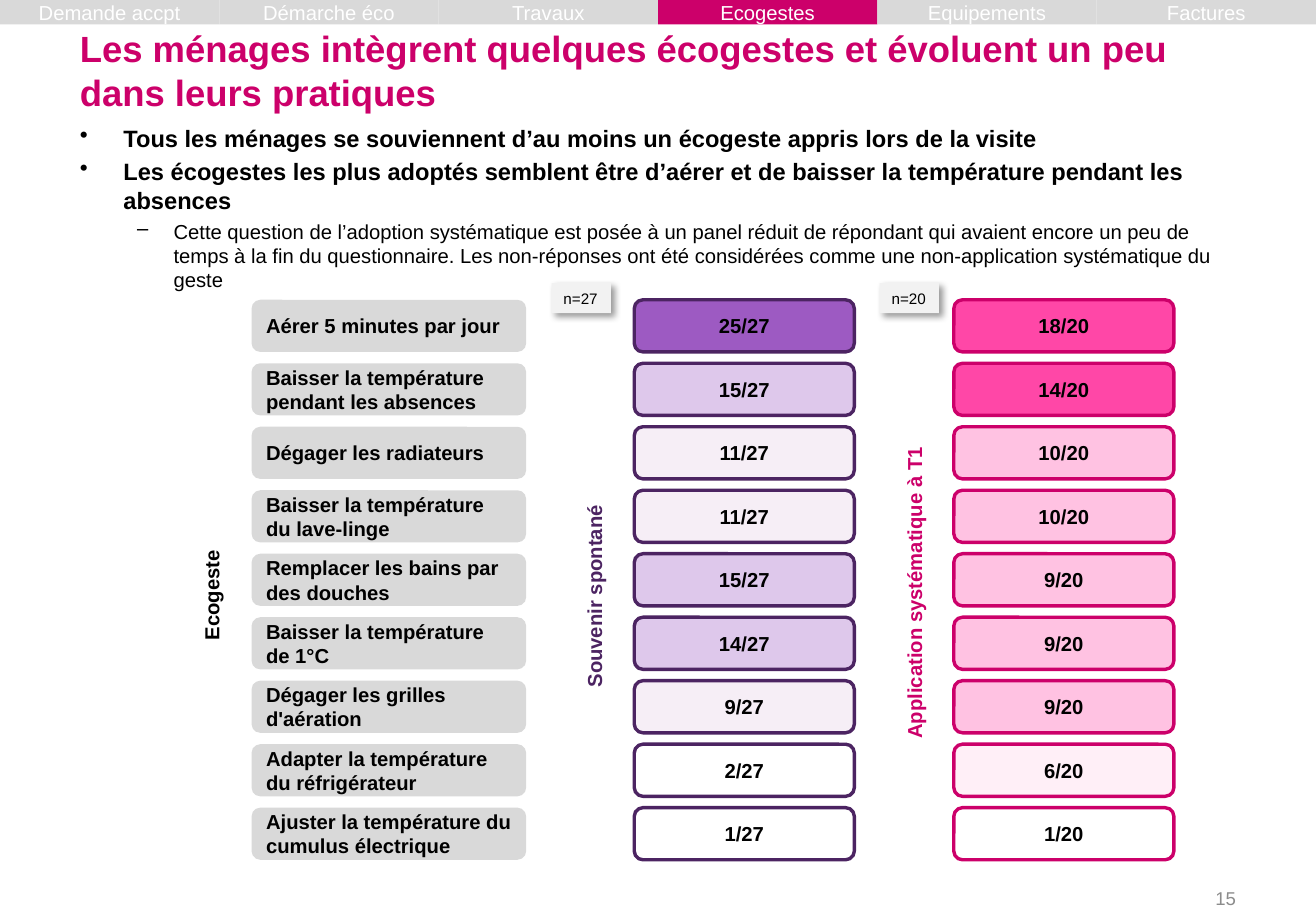
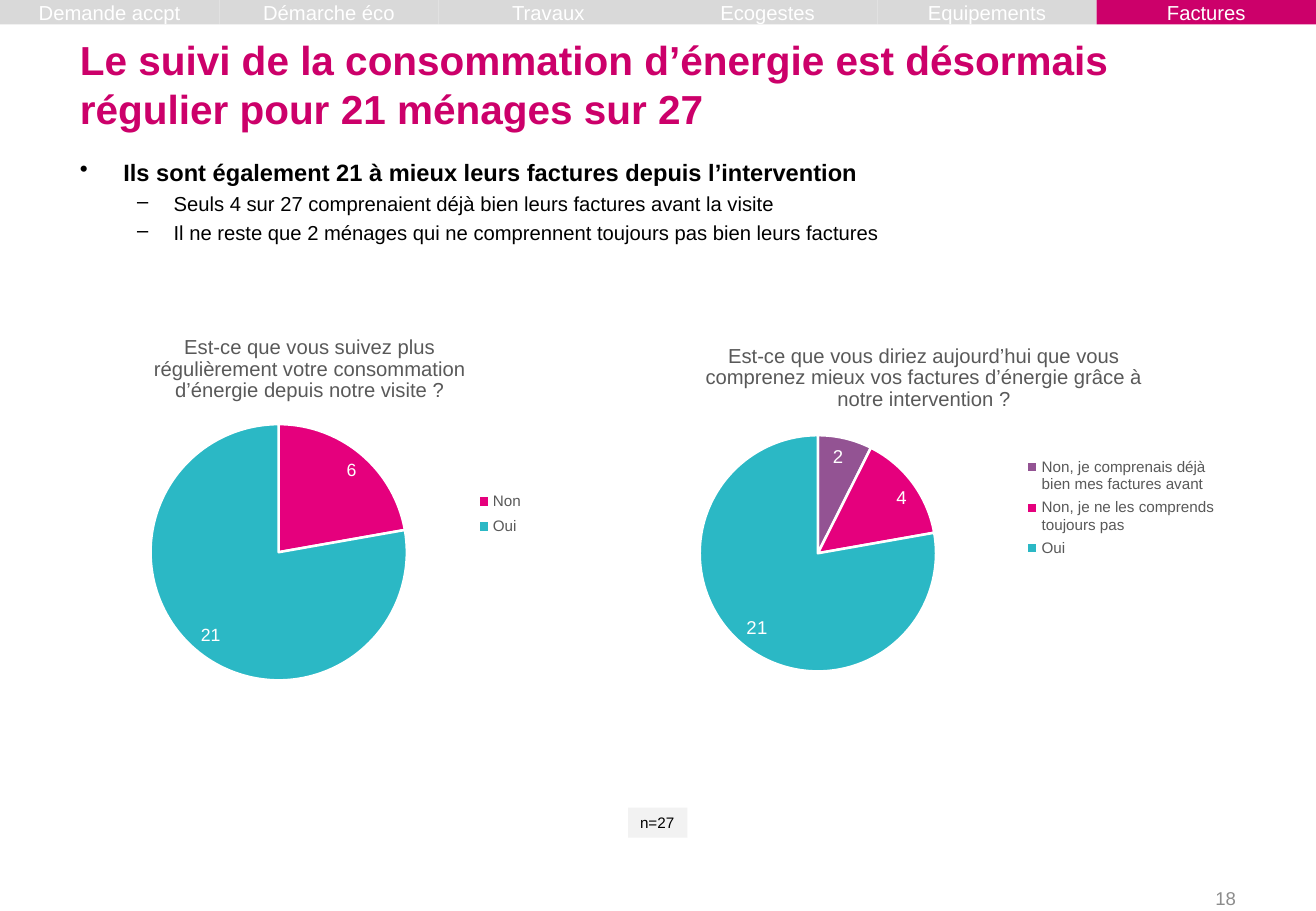
from dataclasses import dataclass

from lxml import etree
from pptx import Presentation
from pptx import util as u
from pptx.chart import data as cd
from pptx.dml.color import RGBColor
from pptx.enum import chart as ch, shapes, text
from pptx.oxml import ns

Cm, Pt = u.Cm, u.Pt


@dataclass(frozen=True)
class Theme:
    font: str = "Arial"
    accent: str = "CC006A"
    band: str = "D9D9D9"
    note: str = "F2F2F2"
    white: str = "FFFFFF"
    black: str = "000000"
    grey: str = "595959"
    page: str = "8C8C8C"
    violet: str = "4C2462"
    # Fills from the strongest share to the weakest
    violets: tuple = ("9D5AC2", "DEC8EB", "F6EEF6", "FFFFFF")
    pinks: tuple = ("FF47A7", "FFC2E2", "FFEFF7", "FFFFFF")
    teal: str = "2BB8C5"
    magenta: str = "E5007D"
    plum: str = "935393"
    title: float = 24
    title_small: float = 21.6
    body: float = 14
    label: float = 12
    page_size: float = 11
    small: float = 9


T = Theme()
WIDTH, HEIGHT = 27.51, 19.05
PAD = {"margin_left": Cm(0.3), "margin_right": Cm(0.3),
       "margin_top": Cm(0.15), "margin_bottom": Cm(0.15)}
MIDDLE = {"vertical_anchor": text.MSO_ANCHOR.MIDDLE}
CENTER, RIGHT = text.PP_ALIGN.CENTER, text.PP_ALIGN.RIGHT
TABS = ["Demande accpt", "Démarche éco", "Travaux", "Ecogestes",
        "Equipements", "Factures"]
SHARE_STEPS = (0.7, 0.42, 0.3)
GESTURES = [
    ("Aérer 5 minutes par jour", 25, 18),
    ("Baisser la température pendant les absences", 15, 14),
    ("Dégager les radiateurs", 11, 10),
    ("Baisser la température du lave-linge", 11, 10),
    ("Remplacer les bains par des douches", 15, 9),
    ("Baisser la température de 1°C", 14, 9),
    ("Dégager les grilles d'aération", 9, 9),
    ("Adapter la température du réfrigérateur", 2, 6),
    ("Ajuster la température du cumulus électrique", 1, 1),
]


# --- Helpers ---
def set_all(obj, fmt):
    for name, value in fmt.items():
        setattr(obj, name, value)


def style(font, size, color, bold=False):
    set_all(font, {"name": T.font, "size": Pt(size), "bold": bold})
    font.color.rgb = RGBColor.from_string(color)


def write(p, words, size, color, bold=False, align=None):
    r = p.add_run()
    r.text = words
    style(r.font, size, color, bold)
    if align is not None:
        p.alignment = align


def add_text(s, box, words, size, color, bold=False, align=None, frame=None):
    sp = s.shapes.add_textbox(*map(Cm, box))
    set_all(sp.text_frame, {"word_wrap": True, **(frame or {})})
    write(sp.text_frame.paragraphs[0], words, size, color, bold, align)
    return sp


def add_block(parent, kind, box, fill, line=None):
    sp = parent.add_shape(kind, *map(Cm, box))
    sp.shadow.inherit = False
    sp.fill.solid()
    sp.fill.fore_color.rgb = RGBColor.from_string(fill)
    if line:
        sp.line.color.rgb = RGBColor.from_string(line)
        sp.line.width = Pt(2)
    else:
        sp.line.fill.background()
    return sp


# --- Shared slide parts ---
def add_tabs(s, box, active):
    left, top, width, height = box
    step = width / len(TABS)
    for i, name in enumerate(TABS):
        fill = T.accent if name == active else T.band
        sp = add_block(s.shapes, shapes.MSO_SHAPE.RECTANGLE,
                       (left + i * step, top, step, height), fill)
        set_all(sp.text_frame, {**MIDDLE, "margin_left": 0, "margin_right": 0})
        write(sp.text_frame.paragraphs[0], name, T.label, T.white, align=CENTER)


def add_body(s, box, items):
    tf = s.shapes.add_textbox(*map(Cm, box)).text_frame
    set_all(tf, {**PAD, "word_wrap": True})
    levels = [("•", 0.91, -0.91, T.body, True), ("–", 1.96, -0.76, T.label, False)]
    for i, (level, words) in enumerate(items):
        mark, margin, indent, size, bold = levels[level]
        p = tf.add_paragraph() if i else tf.paragraphs[0]
        pPr = p._p.get_or_add_pPr()
        pPr.set("marL", str(Cm(margin)))
        pPr.set("indent", str(Cm(indent)))
        etree.SubElement(pPr, ns.qn("a:buChar")).set("char", mark)
        set_all(p, {"level": level, "space_before": Pt(3 if i else 0)})
        write(p, words, size, T.black, bold)


def add_base(prs, active, title, title_box, title_size, page):
    s = prs.slides.add_slide(prs.slide_layouts[6])
    add_tabs(s, (0, 0, WIDTH, 0.51), active)
    add_text(s, title_box, title, title_size, T.accent, True,
             frame={**PAD, "vertical_anchor": text.MSO_ANCHOR.BOTTOM})
    add_text(s, (19.71, 18.53, 6.43, 0.5), page, T.page_size, T.page,
             align=RIGHT, frame={**PAD, **MIDDLE, "margin_top": 0, "margin_bottom": 0})
    return s


def add_sample_note(s, left, top, words, shadow=False):
    sp = add_block(s.shapes, shapes.MSO_SHAPE.RECTANGLE,
                   (left, top, 1.24, 0.63), T.note)
    set_all(sp.text_frame, {**MIDDLE, "word_wrap": False})
    write(sp.text_frame.paragraphs[0], words, T.small, T.black,
          align=text.PP_ALIGN.LEFT)
    if shadow:
        effects = sp._element.spPr.find(ns.qn("a:effectLst"))
        outer = etree.SubElement(effects, ns.qn("a:outerShdw"), {
            "blurRad": str(Pt(4)), "dist": str(Pt(3)), "dir": "2700000",
            "algn": "tl", "rotWithShape": "0"})
        color = etree.SubElement(outer, ns.qn("a:srgbClr"), val=T.black)
        etree.SubElement(color, ns.qn("a:alpha"), val="40000")


# --- Grid of gestures ---
def share_fill(count, total, fills):
    return fills[sum(count / total < step for step in SHARE_STEPS)]


def add_gesture_grid(s, box):
    left, top, width, height = box
    row_h, label_w, value_w = 1.09, 5.74, 4.6
    pitch = (height - row_h) / (len(GESTURES) - 1)
    for i, (name, recalled, applied) in enumerate(GESTURES):
        cells = [
            (0, label_w, name, T.band, None, text.PP_ALIGN.LEFT),
            (8, value_w, f"{recalled}/27", share_fill(recalled, 27, T.violets),
             T.violet, CENTER),
            (width - value_w, value_w, f"{applied}/20",
             share_fill(applied, 20, T.pinks), T.accent, CENTER),
        ]
        row = s.shapes.add_group_shape().shapes
        for x, w, words, fill, line, align in cells:
            sp = add_block(row, shapes.MSO_SHAPE.ROUNDED_RECTANGLE,
                           (left + x, top + i * pitch, w, row_h), fill, line)
            set_all(sp.text_frame, {**MIDDLE, "word_wrap": True})
            write(sp.text_frame.paragraphs[0], words, T.label, T.black, True, align)

    # Vertical column headings, given by their centre
    headings = [("Ecogeste", -0.84, 6.18, 4, T.black),
                ("Souvenir spontané", 7.16, 6.2, 5, T.violet),
                ("Application systématique à T1", 13.85, 6.13, 7.8, T.accent)]
    for words, x, y, length, color in headings:
        sp = add_text(s, (left + x - length / 2, top + y - 0.38, length, 0.76),
                      words, T.label, color, True, CENTER)
        sp.rotation = 270

    for x, words in ((6.27, "n=27"), (13.13, "n=20")):
        add_sample_note(s, left + x, top - 0.35, words, shadow=True)


# --- Pie charts ---
def set_layout(parent, after, area, inner=False):
    for old in parent.findall(ns.qn("c:layout")):
        parent.remove(old)
    layout = etree.Element(ns.qn("c:layout"))
    manual = etree.SubElement(layout, ns.qn("c:manualLayout"))
    values = [("layoutTarget", "inner")] if inner else []
    values += [("xMode", "edge"), ("yMode", "edge"), *zip("xywh", area)]
    for tag, value in values:
        etree.SubElement(manual, ns.qn(f"c:{tag}"), val=str(value))
    if after is None:
        parent.insert(0, layout)
    else:
        after.addnext(layout)


def add_pie(s, box, title, slices, label_size, plot_area, legend_area):
    names, values, colors = zip(*slices)
    data = cd.CategoryChartData(number_format="0")
    data.categories = names
    data.add_series("Series 1", values)
    chart = s.shapes.add_chart(ch.XL_CHART_TYPE.PIE, *map(Cm, box), data).chart
    style(chart.font, 10, T.black)
    write(chart.chart_title.text_frame.paragraphs[0], title, T.label, T.grey)

    set_all(chart, {"has_legend": True})
    set_all(chart.legend, {"position": ch.XL_LEGEND_POSITION.RIGHT,
                           "include_in_layout": False})
    style(chart.legend.font, T.small, T.grey)

    plot = chart.plots[0]
    set_all(plot, {"vary_by_categories": True, "has_data_labels": True})
    set_all(plot.data_labels, {
        "show_value": True, "show_percentage": False, "number_format": "0",
        "number_format_is_linked": False,
        "position": ch.XL_LABEL_POSITION.INSIDE_END})
    style(plot.data_labels.font, label_size, T.white)
    for i, color in enumerate(colors):
        fmt = plot.series[0].points[i].format
        fmt.fill.solid()
        fmt.fill.fore_color.rgb = RGBColor.from_string(color)
        fmt.line.color.rgb = RGBColor.from_string(T.white)
        fmt.line.width = Pt(1.5)

    set_layout(plot._element.getparent(), None, plot_area, inner=True)
    legend = chart.legend._element
    set_layout(legend, legend.find(ns.qn("c:legendPos")), legend_area)


# --- Slides ---
def gestures_slide(prs):
    s = add_base(prs, "Ecogestes",
                 "Les ménages intègrent quelques écogestes et évoluent un peu "
                 "dans leurs pratiques", (1.37, 0.46, 24.77, 2.06),
                 T.title_small, "15")
    add_body(s, (1.37, 2.44, 24.77, 3.76), [
        (0, "Tous les ménages se souviennent d’au moins un écogeste appris lors "
            "de la visite"),
        (0, "Les écogestes les plus adoptés semblent être d’aérer et de baisser "
            "la température pendant les absences"),
        (1, "Cette question de l’adoption systématique est posée à un panel réduit "
            "de répondant qui avaient encore un peu de temps à la fin du "
            "questionnaire. Les non-réponses ont été considérées comme une "
            "non-application systématique du geste"),
    ])
    add_gesture_grid(s, (5.26, 6.27, 19.28, 11.71))


def bills_slide(prs):
    s = add_base(prs, "Factures",
                 "Le suivi de la consommation d’énergie est désormais régulier "
                 "pour 21 ménages sur 27", (1.37, 0.53, 24.77, 2.39),
                 T.title, "18")
    add_body(s, (1.37, 3.15, 24.77, 2.13), [
        (0, "Ils sont également 21 à mieux leurs factures depuis l’intervention"),
        (1, "Seuls 4 sur 27 comprenaient déjà bien leurs factures avant la visite"),
        (1, "Il ne reste que 2 ménages qui ne comprennent toujours pas bien leurs "
            "factures"),
    ])
    add_pie(s, (1.85, 6.63, 9.25, 8),
            "Est-ce que vous suivez plus régulièrement votre consommation "
            "d’énergie depuis notre visite ?",
            [("Non", 6, T.magenta), ("Oui", 21, T.teal)], 10.5,
            (0.14, 0.28, 0.58, 0.67), (0.86, 0.44, 0.14, 0.15))
    add_pie(s, (12.98, 6.81, 12.67, 7.62),
            "Est-ce que vous diriez aujourd’hui que vous comprenez mieux vos "
            "factures d’énergie grâce à notre intervention ?",
            [("Non, je comprenais déjà bien mes factures avant", 2, T.plum),
             ("Non, je ne les comprends toujours pas", 4, T.magenta),
             ("Oui", 21, T.teal)], 11,
            (0.13, 0.3, 0.39, 0.65), (0.66, 0.35, 0.33, 0.3))
    add_sample_note(s, 13.13, 16.89, "n=27")


def main():
    prs = Presentation()
    set_all(prs, {"slide_width": Cm(WIDTH), "slide_height": Cm(HEIGHT)})
    gestures_slide(prs)
    bills_slide(prs)
    prs.save("out.pptx")


if __name__ == "__main__":
    main()
